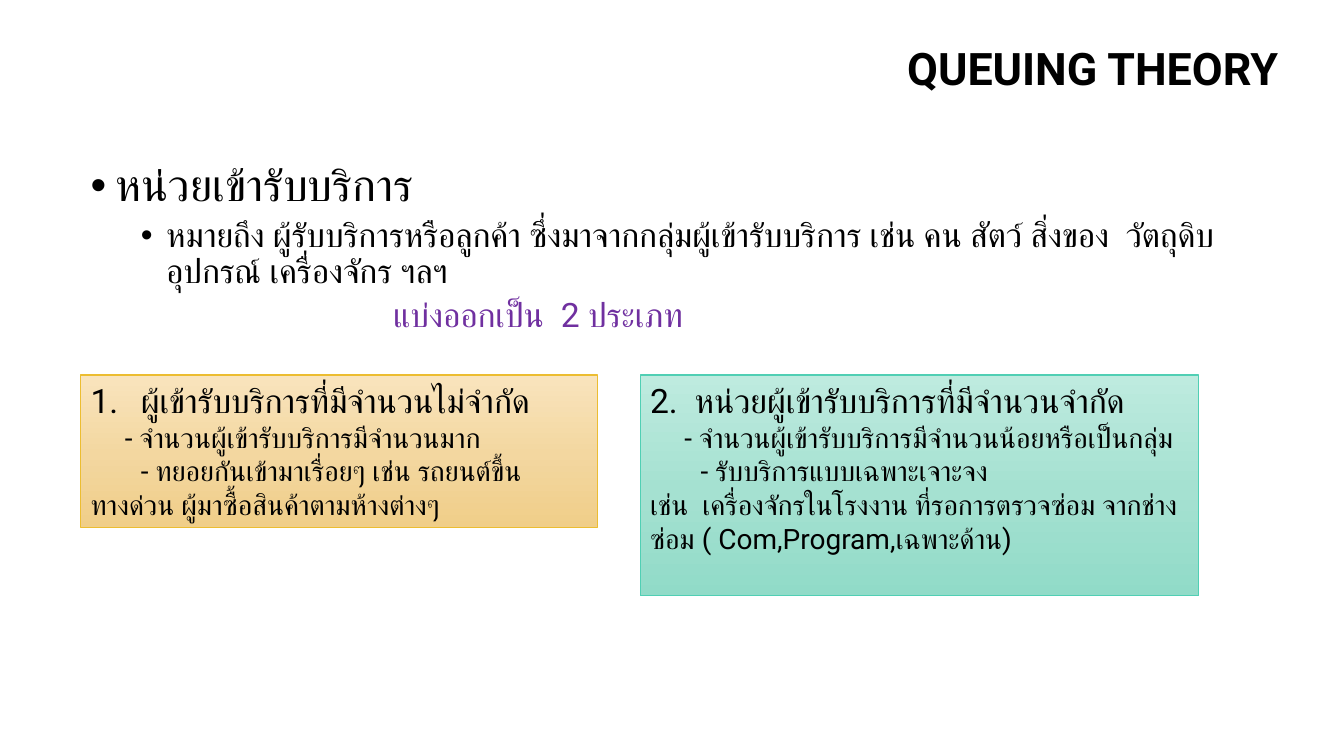
from copy import deepcopy

from lxml.etree import SubElement
from pptx import Presentation
from pptx.dml.color import RGBColor
from pptx.enum.shapes import MSO_SHAPE as SHAPE
from pptx.enum.text import MSO_ANCHOR as ANCHOR, PP_ALIGN as ALIGN
from pptx.oxml.ns import qn
from pptx.util import Inches, Pt

FONT = "Roboto"
BLACK, PURPLE = "000000", "7030A0"

HEADING = [dict(text="QUEUING THEORY", size=32, bold=True, align=ALIGN.RIGHT, spacing=0.9)]
DEFINITION = [
    dict(text="หน่วยเข้ารับบริการ", size=32, left=0.25, first=-0.25, bullet="•", spacing=0.9),
    dict(text="หมายถึง ผู้รับบริการหรือลูกค้า ซึ่งมาจากกลุ่มผู้เข้ารับบริการ เช่น คน สัตว์ สิ่งของ  วัตถุดิบ อุปกรณ์ เครื่องจักร ฯลฯ",
         size=24, level=1, left=0.75, first=-0.25, bullet="•", spacing=0.9, before=5),
    dict(text="แบ่งออกเป็น  2 ประเภท", size=24, level=1, left=3, color=PURPLE,
         spacing=0.9, before=5),
]
UNLIMITED = [
    dict(text="ผู้เข้ารับบริการที่มีจำนวนไม่จำกัด", size=24, left=0.5, first=-0.5, numbered=True),
    dict(text="- จำนวนผู้เข้ารับบริการมีจำนวนมาก", size=20, first=0.34),
    dict(text="- ทยอยกันเข้ามาเรื่อยๆ เช่น รถยนต์ขึ้นทางด่วน ผู้มาซื้อสินค้าตามห้างต่างๆ", size=20, first=0.5),
]
LIMITED = [
    dict(text="2.  หน่วยผู้เข้ารับบริการที่มีจำนวนจำกัด", size=24),
    dict(text="- จำนวนผู้เข้ารับบริการมีจำนวนน้อยหรือเป็นกลุ่ม", size=20, first=0.34),
    dict(text="- รับบริการแบบเฉพาะเจาะจง", size=20, first=0.5),
    dict(text="เช่น  เครื่องจักรในโรงงาน ที่รอการตรวจซ่อม จากช่างซ่อม ( Com,Program,เฉพาะด้าน)", size=20),
]
TYPES = [
    (UNLIMITED, (0.8, 3.72, 5.13, 1.51), ("F9E4BD", "F3D7A0", "F0CE89"), "ECBD31"),
    (LIMITED, (6.35, 3.72, 5.54, 2.19), ("BEEBDF", "A5E1D1", "91DBC8"), "50CFB4"),
]
STOPS = (0, 0.52, 1)


def rgb(value):
    return RGBColor.from_string(value)


def write(frame, paragraphs, anchor=ANCHOR.TOP):
    frame.word_wrap = True
    frame.vertical_anchor = anchor
    for index, item in enumerate(paragraphs):
        paragraph = frame.paragraphs[0] if index == 0 else frame.add_paragraph()
        paragraph.text = item["text"]
        paragraph.level = item.get("level", 0)
        paragraph.alignment = item.get("align", ALIGN.LEFT)
        paragraph.line_spacing = item.get("spacing", 1.0)
        paragraph.space_before = Pt(item.get("before", 0))
        properties = paragraph._p.get_or_add_pPr()
        properties.set("marL", str(Inches(item.get("left", 0))))
        properties.set("indent", str(Inches(item.get("first", 0))))
        if "bullet" in item:
            SubElement(properties, qn("a:buFont"), typeface="Arial")
            SubElement(properties, qn("a:buChar"), char=item["bullet"])
        elif item.get("numbered"):
            SubElement(properties, qn("a:buAutoNum"), type="arabicPeriod")
        else:
            SubElement(properties, qn("a:buNone"))
        font = paragraph.font
        font.name = FONT
        font.size = Pt(item["size"])
        font.bold = item.get("bold", False)
        font.color.rgb = rgb(item.get("color", BLACK))
        SubElement(properties.find(qn("a:defRPr")), qn("a:cs"), typeface=FONT)


def add_text(slide, place, paragraphs, anchor=ANCHOR.TOP):
    box = slide.shapes.add_textbox(*map(Inches, place))
    write(box.text_frame, paragraphs, anchor)


def add_type(slide, paragraphs, place, shades, border):
    panel = slide.shapes.add_shape(SHAPE.RECTANGLE, *map(Inches, place))
    panel.shadow.inherit = False
    panel.fill.gradient()
    panel.fill.gradient_angle = 270
    stop_list = panel._element.spPr.find(".//" + qn("a:gsLst"))
    stop_list.insert(1, deepcopy(stop_list[0]))
    for stop, position, shade in zip(panel.fill.gradient_stops, STOPS, shades):
        stop.position = position
        stop.color.rgb = rgb(shade)
    panel.line.color.rgb = rgb(border)
    panel.line.width = Pt(0.75)
    write(panel.text_frame, paragraphs)


def main():
    deck = Presentation()
    deck.slide_width, deck.slide_height = Inches(13.33), Inches(7.5)
    slide = deck.slides.add_slide(deck.slide_layouts[6])
    add_text(slide, (3.36, 0, 9.42, 1.41), HEADING, ANCHOR.MIDDLE)
    add_text(slide, (0.8, 1.57, 11.83, 1.93), DEFINITION)
    for customer_type in TYPES:
        add_type(slide, *customer_type)
    deck.save("out.pptx")


if __name__ == "__main__":
    main()
